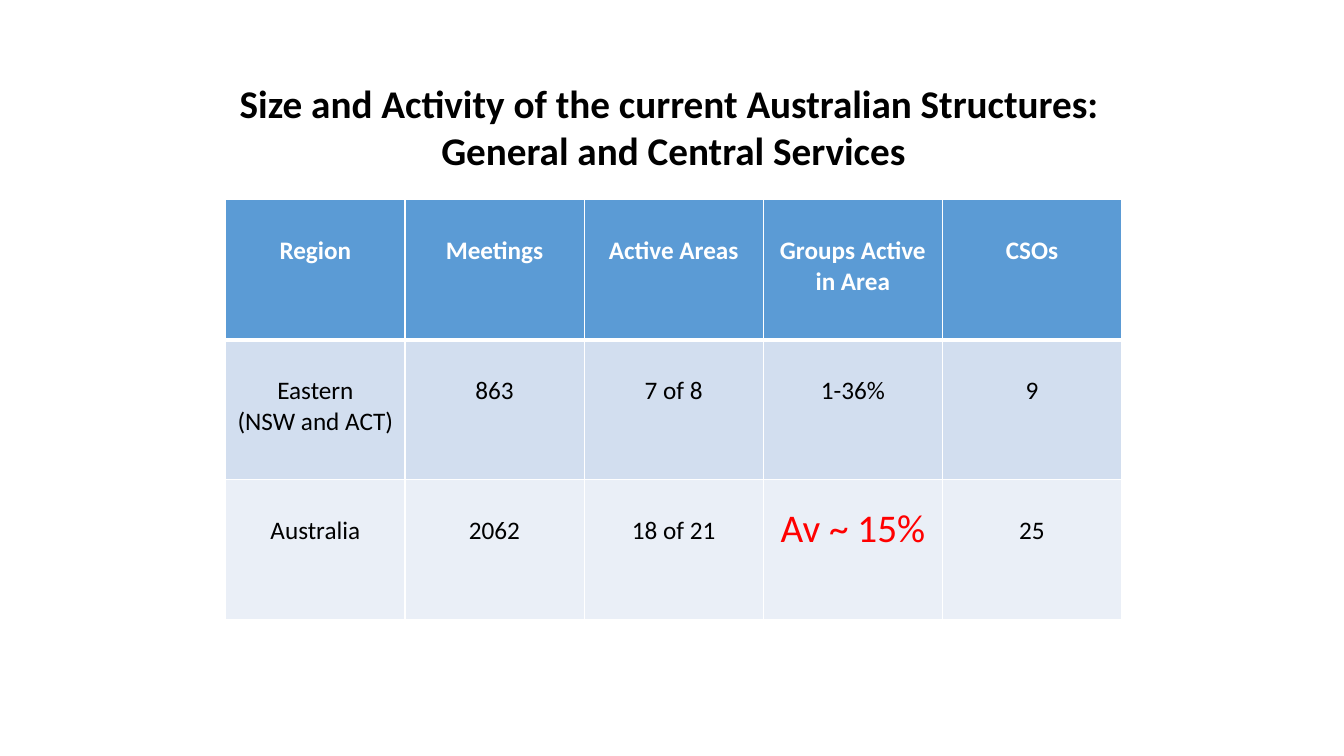
from lxml import etree
from pptx import Presentation
from pptx.dml.color import RGBColor
from pptx.enum.text import PP_ALIGN
from pptx.oxml import parse_xml
from pptx.util import Cm, Pt

CENTER = PP_ALIGN.CENTER
NS = "http://schemas.openxmlformats.org/drawingml/2006/main"
FILLS = ["5B9BD5", "D2DEEF", "EAEFF7"]
HEAD = {"size": Pt(18), "bold": True, "color": "FFFFFF"}
BODY = {"size": Pt(18), "bold": False, "color": "000000"}
ALERT = {"size": Pt(28), "bold": False, "color": "FF0000"}
TITLE = {"size": Pt(28), "bold": True, "color": "000000"}
HEADING = ["Size and Activity of the current Australian Structures: ",
           "General and Central Services"]
AVERAGE = "Av ~ 15%"
ROWS = [
    ["Region", "Meetings", "Active Areas", "Groups Active in Area", "CSOs"],
    ["Eastern\n(NSW and ACT)", "863", "7 of 8", "1-36%", "9"],
    ["Australia", "2062", "18 of 21", AVERAGE, "25"],
]


def paint(target, color):
    """Give a fill or font colour from a hex string."""
    if hasattr(target, "solid"):
        target.solid()
        target = target.fore_color
    else:
        target = target.color
    target.rgb = RGBColor.from_string(color)


def write(frame, lines, style):
    """Write centred lines in one style."""
    frame.word_wrap = True
    for num, line in enumerate(lines):
        para = frame.paragraphs[0] if num == 0 else frame.add_paragraph()
        para.alignment = CENTER
        run = para.add_run()
        run.text = line
        run.font.name = "Calibri"
        for key, value in style.items():
            if key == "color":
                paint(run.font, value)
            else:
                setattr(run.font, key, value)


def edge(cell, top, bottom):
    """Draw white cell borders, with top and bottom widths in points."""
    widths = {"lnL": 1, "lnR": 1, "lnT": top, "lnB": bottom}
    props = cell._tc.get_or_add_tcPr()
    for spot, (tag, width) in enumerate(widths.items()):
        line = etree.Element(f"{{{NS}}}{tag}", w=str(Pt(width)))
        fill = etree.SubElement(line, f"{{{NS}}}solidFill")
        etree.SubElement(fill, f"{{{NS}}}srgbClr", val="FFFFFF")
        props.insert(spot, parse_xml(etree.tostring(line)))


def add_grid(slide, left, top, width, height):
    """Place the table of regions in the given box."""
    count = len(ROWS)
    grid = slide.shapes.add_table(count, len(ROWS[0]), left, top,
                                  width, height).table
    for row, texts in enumerate(ROWS):
        for col, text in enumerate(texts):
            cell = grid.cell(row, col)
            paint(cell.fill, FILLS[row])
            edge(cell, 3 if row == 1 else 1, 3 if row == 0 else 1)
            alert = text == AVERAGE
            cell.margin_top = Cm(0.64 if alert else 0.9)
            style = ALERT if alert else BODY if row else HEAD
            write(cell.text_frame, text.split("\n"), style)


def add_title(slide, left, top, width, height):
    """Place the two-line heading in the given box."""
    box = slide.shapes.add_textbox(left, top, width, height)
    write(box.text_frame, HEADING, TITLE)


def main():
    """Build and save the slide."""
    deck = Presentation()
    deck.slide_width, deck.slide_height = Cm(33.87), Cm(19.05)
    slide = deck.slides.add_slide(deck.slide_layouts[6])
    add_grid(slide, Cm(5.69), Cm(5.03), Cm(22.58), Cm(10.59))
    add_title(slide, Cm(1.45), Cm(1.88), Cm(31.04), Cm(2.64))
    deck.save("out.pptx")


if __name__ == "__main__":
    main()
